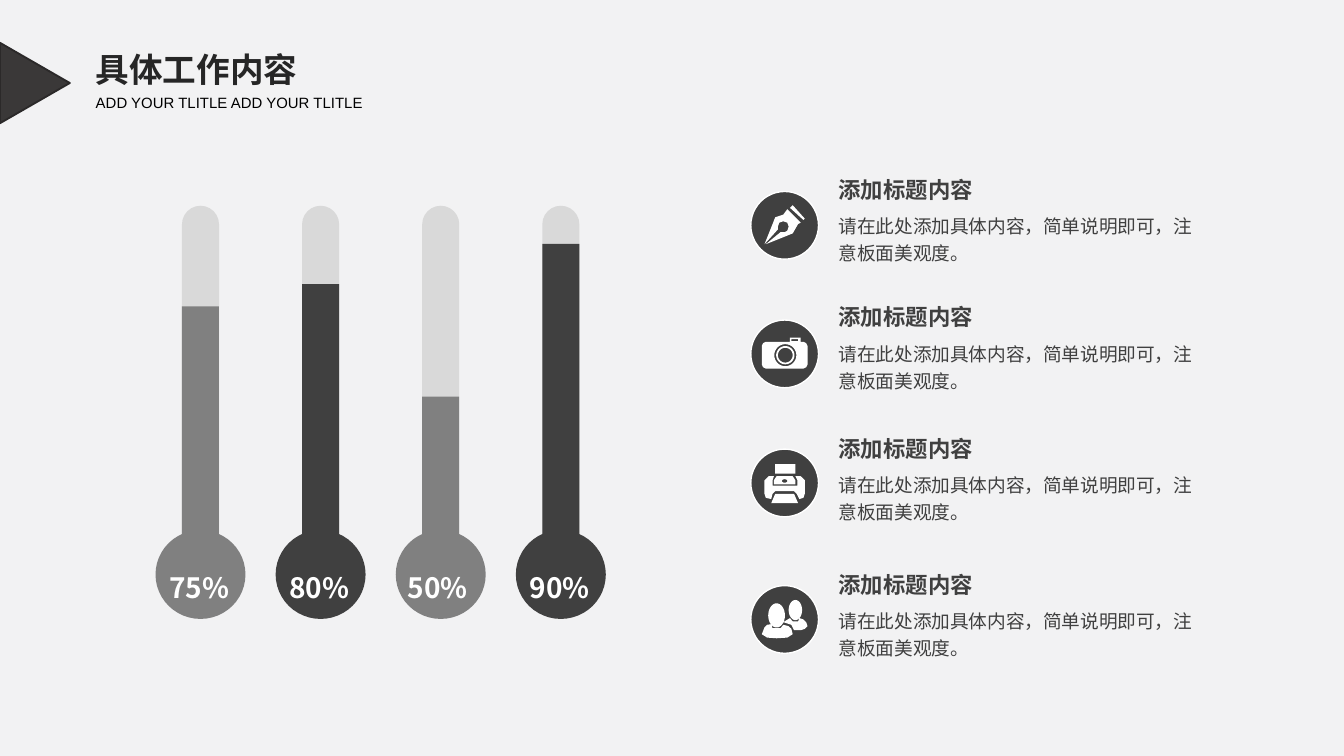
import math
import lxml.etree
import pptx
import pptx.dml.color
import pptx.enum.shapes
import pptx.enum.text
import pptx.oxml.ns
import pptx.util

Cm = pptx.util.Cm
Pt = pptx.util.Pt
SHAPE = pptx.enum.shapes.MSO_SHAPE
ANCHOR = pptx.enum.text.MSO_ANCHOR
ALIGN = pptx.enum.text.PP_ALIGN
CJK = "Noto Sans CJK SC"
COLORS = {
    "background": "F2F2F3", "arrow": "3A3838", "arrow edge": "2B2929",
    "heading": "262626", "black": "000000", "dark": "404040",
    "grey": "808080", "tube": "D9D9D9", "white": "FFFFFF",
}
RGB = {name: pptx.dml.color.RGBColor.from_string(value) for name, value in COLORS.items()}

deck = pptx.Presentation()
deck.slide_width, deck.slide_height = Cm(25.4), Cm(14.29)
page = deck.slides.add_slide(deck.slide_layouts[6])
page.background.fill.solid()
page.background.fill.fore_color.rgb = RGB["background"]


def add_shape(kind, left, top, width, height, color, edge=None, edge_width=1):
    shape = page.shapes.add_shape(kind, Cm(left), Cm(top), Cm(width), Cm(height))
    shape.shadow.inherit = False
    shape.fill.solid()
    shape.fill.fore_color.rgb = RGB[color]
    if edge:
        shape.line.color.rgb = RGB[edge]
        shape.line.width = Pt(edge_width)
    else:
        shape.line.fill.background()
    return shape


def add_text(text, left, top, width, height, size, color, font=CJK, bold=False,
             spacing=1.0, align=ALIGN.LEFT, anchor=ANCHOR.TOP, inset=(0.25, 0.13)):
    box = page.shapes.add_textbox(Cm(left), Cm(top), Cm(width), Cm(height))
    frame = box.text_frame
    frame.word_wrap = True
    frame.vertical_anchor = anchor
    frame.margin_left = frame.margin_right = Cm(inset[0])
    frame.margin_top = frame.margin_bottom = Cm(inset[1])
    paragraph = frame.paragraphs[0]
    paragraph.text = text
    paragraph.alignment = align
    paragraph.line_spacing = spacing
    paragraph.font.size = Pt(size)
    paragraph.font.bold = bold
    paragraph.font.color.rgb = RGB[color]
    paragraph.font.name = font
    # East Asian typeface for the Chinese characters
    defaults = paragraph._p.pPr.find(pptx.oxml.ns.qn("a:defRPr"))
    lxml.etree.SubElement(defaults, pptx.oxml.ns.qn("a:ea"), typeface=CJK)


# Heading
add_text("具体工作内容", 1.63, 0.71, 7.42, 1.27, 18, "heading", "Arial", bold=True,
         spacing=0.9, anchor=ANCHOR.MIDDLE, inset=(0.18, 0.09))
add_text("ADD YOUR TLITLE ADD YOUR TLITLE", 1.63, 1.68, 5.9, 0.53, 8, "black", "Arial",
         inset=(0.18, 0.09))
arrow = add_shape(SHAPE.ISOSCELES_TRIANGLE, -0.1, 0.91, 1.52, 1.32, "arrow", "arrow edge")
arrow.rotation = 90

# Thermometers: label, level top, label centre, colour
TUBE_WIDTH, TUBE_TOP, TUBE_BOTTOM = 0.7, 3.89, 10.62
thermometers = [
    ("75%", 5.79, 3.77, "grey"),
    ("80%", 5.37, 6.03, "dark"),
    ("50%", 7.5, 8.27, "grey"),
    ("90%", 4.61, 10.58, "dark"),
]
for index, (label, level, label_center, color) in enumerate(thermometers):
    center = 3.79 + 2.27 * index
    left = center - TUBE_WIDTH / 2
    tube = add_shape(SHAPE.ROUND_2_SAME_RECTANGLE, left, TUBE_TOP, TUBE_WIDTH,
                     TUBE_BOTTOM - TUBE_TOP, "tube")
    tube.adjustments[0] = 0.5
    add_shape(SHAPE.RECTANGLE, left, level, TUBE_WIDTH, TUBE_BOTTOM - level, color)
    add_shape(SHAPE.OVAL, center - 0.85, 10.02, 1.7, 1.68, color)
    add_text(label, label_center - 0.93, 10.34, 1.86, 1.22, 15, "white", bold=True,
             spacing=1.5, align=ALIGN.CENTER)

# Icon outlines around the disc centre, in hundredths of 2.54 cm;
# ovals are centre x, centre y, radius x, radius y
UNIT = Cm(2.54) / 100
pen = {
    "polygons": [
        [(-15, 14), (-7, -6), (-1, -8), (2, -12), (12, -2), (10, -1), (6, 6), (-14, 14),
         (-3, 5), (0, 5), (2, 4), (3, 1), (2, -2), (-1, -3), (-4, -2), (-5, 1), (-5, 3)],
        [(6, -15), (15, -5), (14, -4), (4, -13)],
    ],
    "ovals": [],
}
camera = {
    "polygons": [
        [(-14, -9), (4, -9), (4, -12), (12, -12), (12, -9), (14, -9), (16, -8), (17, -6),
         (17, 8), (16, 10), (14, 11), (-14, 11), (-16, 10), (-17, 8), (-17, -6), (-16, -8)],
        [(5, -11), (10, -11), (10, -9.5), (5, -9.5)],
    ],
    "ovals": [(0.5, 1, 8.2, 8.2), (0.5, 1, 6.8, 6.8), (0.5, 1, 5.5, 5.5)],
}
printer = {
    "polygons": [
        [(-7, -14), (8, -14), (8, -7), (-7, -7)],
        [(-7, 8), (7, 8), (10, 15), (-10, 15)],
        [(-12, -5), (-8, -5), (-9, -2), (-9, 2), (9.5, 2), (9.5, -2), (8, -5), (12, -5),
         (15, -2), (15, 8), (14, 11), (11, 12), (9, 8), (7, 6), (-7, 6), (-9, 8),
         (-10, 12), (-14, 11), (-15, 8), (-15, -2)],
        [(-8, -2), (-6, -5), (6, -5), (8, -2), (8, 1), (-8, 1)],
    ],
    "ovals": [(0, -1.5, 2, 1.3)],
}
people = {
    "polygons": [
        [(-1, 2), (4, -1), (6, 1.5), (10, 1.5), (11, -1), (14, 0), (16, 2), (17, 5),
         (15, 7), (12, 8), (7, 8), (5, 4)],
        [(-17, 11), (-15, 6), (-13, 4), (-10, 3.5), (-9, 6.5), (-3, 6.5), (-1, 4),
         (3, 5), (5, 7), (6, 11), (2, 13.5), (-6, 14), (-13, 13.5)],
    ],
    "ovals": [(8, -7, 5, 7.5), (-6, -3, 6.2, 9)],
}

# Items: icon, disc centre, title top
items = [(pen, 4.26, 3.2), (camera, 6.69, 5.61), (printer, 9.13, 8.1), (people, 11.71, 10.67)]
DISC_X, DISC_SIZE = 14.83, 1.28
for icon, center, title_top in items:
    add_shape(SHAPE.OVAL, DISC_X - DISC_SIZE / 2, center - DISC_SIZE / 2,
              DISC_SIZE, DISC_SIZE, "dark", "white", 0.75)
    outlines = list(icon["polygons"])
    for x, y, radius_x, radius_y in icon["ovals"]:
        angles = [math.tau * step / 32 for step in range(32)]
        outlines.append([(x + radius_x * math.cos(a), y + radius_y * math.sin(a))
                         for a in angles])
    outlines = [[(x * UNIT, y * UNIT) for x, y in outline] for outline in outlines]
    builder = page.shapes.build_freeform(*outlines[0][0])
    builder.add_line_segments(outlines[0][1:])
    for outline in outlines[1:]:
        builder.move_to(*outline[0])
        builder.add_line_segments(outline[1:])
    symbol = builder.convert_to_shape(Cm(DISC_X), Cm(center))
    symbol.shadow.inherit = False
    symbol.fill.solid()
    symbol.fill.fore_color.rgb = RGB["white"]
    symbol.line.fill.background()

    add_text("添加标题内容", 15.6, title_top, 5.1, 0.76, 12, "dark", bold=True)
    add_text("请在此处添加具体内容，简单说明即可，注意板面美观度。", 15.6, title_top + 0.65,
             7.24, 1.27, 10, "dark", spacing=1.2)

deck.save("out.pptx")
